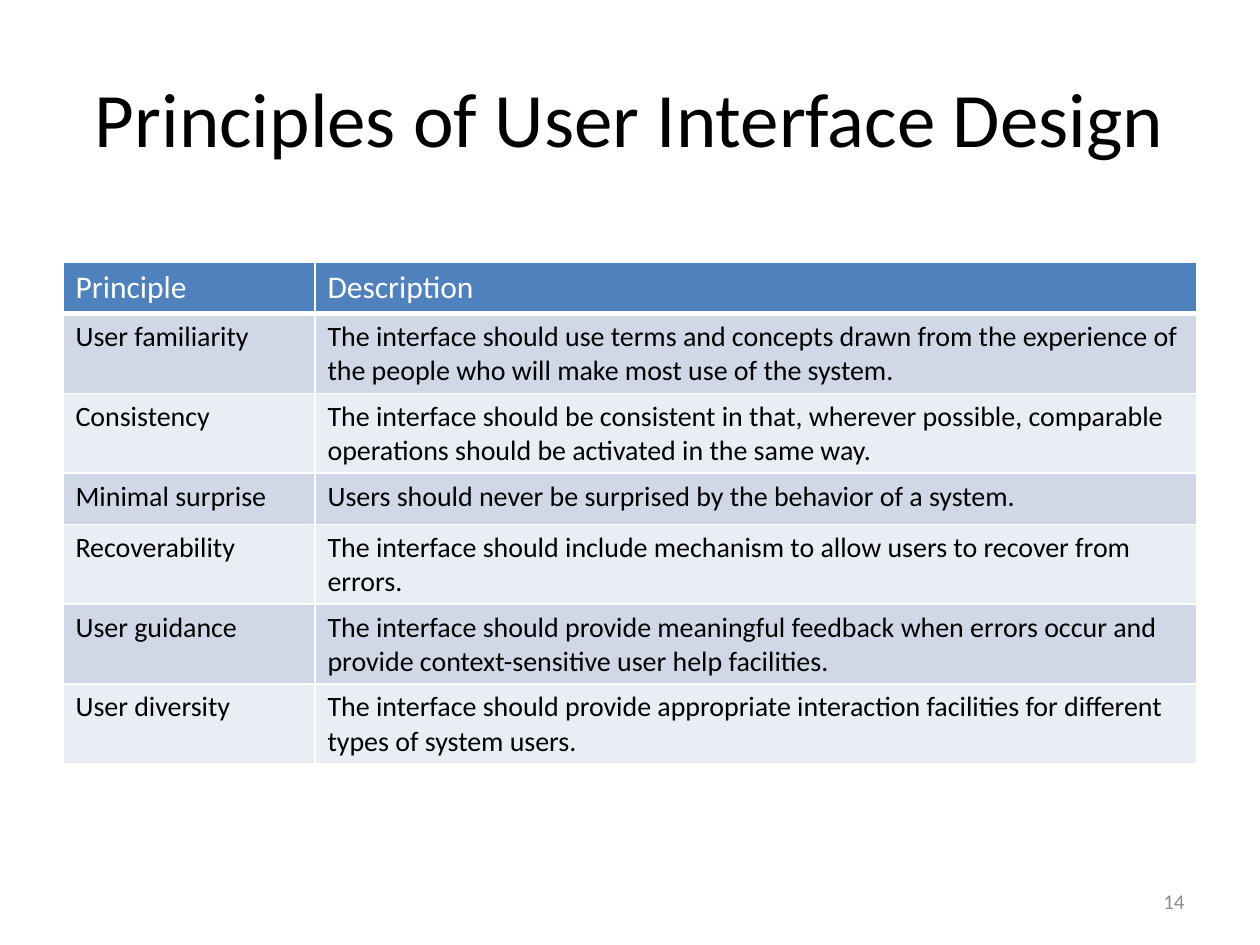
from lxml import etree
from pptx import Presentation
from pptx.dml.color import RGBColor
from pptx.enum import text
from pptx.oxml import ns
from pptx.util import Pt

TITLE = "Principles of User Interface Design"
PAGE_NUMBER = "14"
HEADINGS = ("Principle", "Description")
PRINCIPLES = [
    ("User familiarity", "The interface should use terms and concepts drawn from the "
     "experience of the people who will make most use of the system."),
    ("Consistency", "The interface should be consistent in that, wherever possible, "
     "comparable operations should be activated in the same way."),
    ("Minimal surprise", "Users should never be surprised by the behavior of a system."),
    ("Recoverability", "The interface should include mechanism to allow users to "
     "recover from errors."),
    ("User guidance", "The interface should provide meaningful feedback when errors "
     "occur and provide context-sensitive user help facilities."),
    ("User diversity", "The interface should provide appropriate interaction facilities "
     "for different types of system users."),
]

THEME = {
    "font": "Calibri",
    "title": {"size": 44, "color": "000000"},
    "heading": {"size": 18, "color": "FFFFFF"},
    "body": {"size": 16, "color": "000000"},
    "page": {"size": 12, "color": "8C8C8C"},
    "header_fill": "4F81BD",
    "band_fills": ("D0D8E8", "E9EDF4"),
    "border": "FFFFFF",
}

SLIDE_SIZE = (720, 540)
TITLE_BOX = (36, 21.6, 648, 90)
PAGE_BOX = (516, 500.5, 168, 28.75)
TABLE_ORIGIN = (36, 150)
COLUMN_WIDTHS = (144, 504)
ROW_HEIGHT = 29.2


def write(frame, content, style, align=text.PP_ALIGN.LEFT):
    paragraph = frame.paragraphs[0]
    paragraph.alignment = align
    run = paragraph.add_run()
    run.text = content
    for name, value in {"name": THEME["font"], "size": Pt(style["size"])}.items():
        setattr(run.font, name, value)
    run.font.color.rgb = RGBColor.from_string(style["color"])


def add_label(slide, box, content, style, align):
    frame = slide.shapes.add_textbox(*map(Pt, box)).text_frame
    frame.word_wrap = True
    frame.vertical_anchor = text.MSO_ANCHOR.MIDDLE
    write(frame, content, style, align)


def add_borders(cell, bottom_width):
    """Outline a cell; must run before its fill, which follows in the schema."""
    properties = cell._tc.get_or_add_tcPr()
    for side, width in {"lnL": 1, "lnR": 1, "lnT": 1, "lnB": bottom_width}.items():
        line = etree.SubElement(properties, ns.qn(f"a:{side}"), w=str(Pt(width)))
        fill = etree.SubElement(line, ns.qn("a:solidFill"))
        etree.SubElement(fill, ns.qn("a:srgbClr"), val=THEME["border"])


def add_principles(slide):
    rows = [HEADINGS, *PRINCIPLES]
    size = (sum(COLUMN_WIDTHS), ROW_HEIGHT * len(rows))
    table = slide.shapes.add_table(len(rows), len(HEADINGS),
                                   *map(Pt, TABLE_ORIGIN + size)).table
    for column, width in zip(table.columns, COLUMN_WIDTHS):
        column.width = Pt(width)
    for r, entries in enumerate(rows):
        is_header = r == 0
        fill = THEME["header_fill"] if is_header else THEME["band_fills"][(r - 1) % 2]
        style = THEME["heading" if is_header else "body"]
        for c, entry in enumerate(entries):
            cell = table.cell(r, c)
            add_borders(cell, bottom_width=3 if is_header else 1)
            cell.fill.solid()
            cell.fill.fore_color.rgb = RGBColor.from_string(fill)
            write(cell.text_frame, entry, style)
    # Header emphasis would turn the headings bold
    table.first_row = False
    table.horz_banding = False


def main():
    deck = Presentation()
    deck.slide_width, deck.slide_height = map(Pt, SLIDE_SIZE)
    slide = deck.slides.add_slide(deck.slide_layouts[6])
    add_label(slide, TITLE_BOX, TITLE, THEME["title"], text.PP_ALIGN.CENTER)
    add_principles(slide)
    add_label(slide, PAGE_BOX, PAGE_NUMBER, THEME["page"], text.PP_ALIGN.RIGHT)
    deck.save("out.pptx")


if __name__ == "__main__":
    main()
